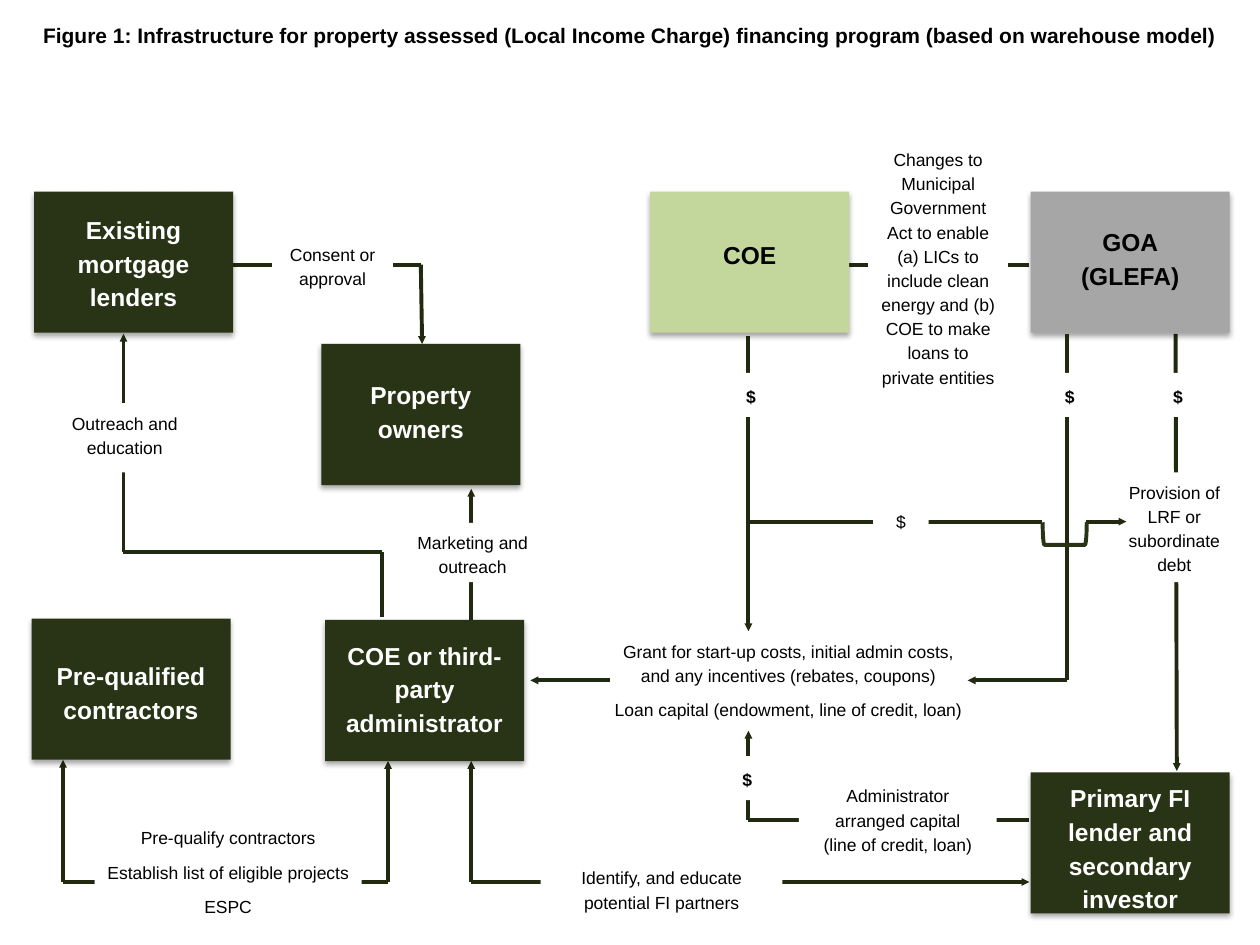
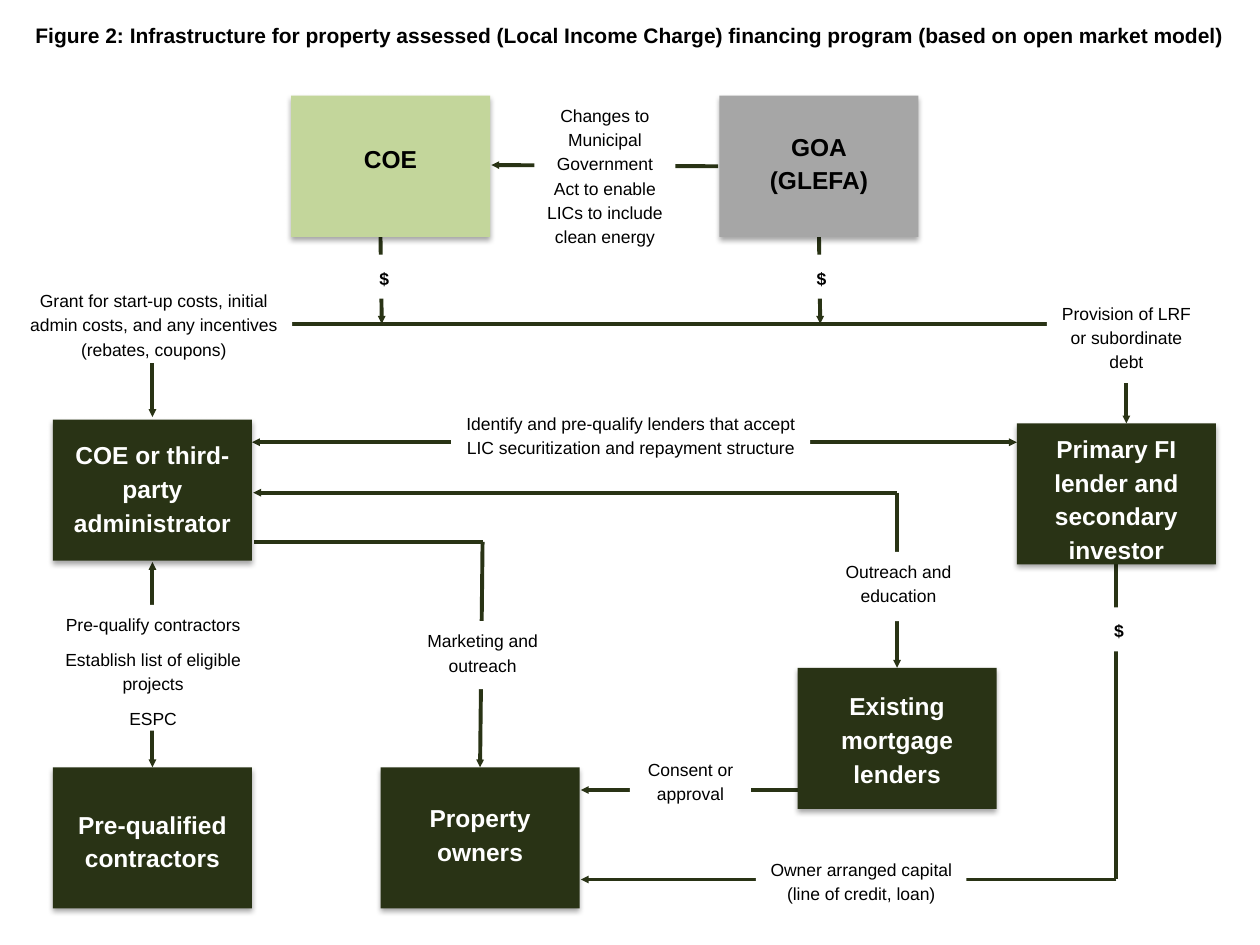
"""Build two flow diagrams of a property assessed financing program."""
import dataclasses
import itertools

import pptx
import pptx.dml.color
import pptx.enum.shapes
import pptx.enum.text
import pptx.oxml
import pptx.oxml.ns
import pptx.util

Inches = pptx.util.Inches
SHAPES = pptx.enum.shapes.MSO_SHAPE
ANCHORS = pptx.enum.text.MSO_ANCHOR
NAMESPACE = pptx.oxml.ns.nsdecls("a")


@dataclasses.dataclass(frozen=True)
class Theme:
    """Colours, type sizes and common dimensions."""
    font: str = "Arial"
    black: str = "000000"
    white: str = "FFFFFF"
    dark: str = "293315"
    warehouse_line: str = "212911"
    green: str = "C3D69B"
    gray: str = "A6A6A6"
    title_size: float = 12
    box_size: float = 14
    label_size: float = 10
    line_width: float = 2.25
    line_spacing: float = 1.15
    box_width: float = 1.58
    box_height: float = 1.12
    inset: float = 0.05


THEME = Theme()

BOX_STYLES = {
    "COE": (THEME.green, THEME.black, 0.3),
    "GOA\n(GLEFA)": (THEME.gray, THEME.black, 0.2),
    "Existing mortgage lenders": (THEME.dark, THEME.white, 0.1),
    "Property owners": (THEME.dark, THEME.white, 0.2),
    "Pre-qualified contractors": (THEME.dark, THEME.white, 0.25),
    "COE or third-party administrator": (THEME.dark, THEME.white, 0.08),
    "Primary FI lender and secondary investor": (THEME.dark, THEME.white, 0),
}
COE, GOA, LENDERS, OWNERS, CONTRACTORS, ADMINISTRATOR, INVESTOR = BOX_STYLES

GRANT = "Grant for start-up costs, initial admin costs, and any incentives (rebates, coupons)"
PROVISION = "Provision of LRF or subordinate debt"
PREQUALIFY = "Pre-qualify contractors\nEstablish list of eligible projects\nESPC"


def color(value):
    """Return an RGB colour from its hexadecimal value."""
    return pptx.dml.color.RGBColor.from_string(value)


def write_text(shape, text, size=THEME.label_size, ink=THEME.black, bold=False,
               anchor=ANCHORS.TOP, top=0, space_after=0, line_spacing=THEME.line_spacing):
    """Write centred paragraphs, one per line of text."""
    frame = shape.text_frame
    frame.word_wrap = True
    frame.auto_size = pptx.enum.text.MSO_AUTO_SIZE.NONE
    frame.vertical_anchor = anchor
    frame.margin_top = Inches(THEME.inset + top)
    frame.text = text
    for paragraph in frame.paragraphs:
        paragraph.alignment = pptx.enum.text.PP_ALIGN.CENTER
        paragraph.line_spacing = line_spacing
        paragraph.space_before = pptx.util.Pt(0)
        paragraph.space_after = pptx.util.Pt(space_after)
        font = paragraph.runs[0].font
        font.name, font.size, font.bold = THEME.font, pptx.util.Pt(size), bold
        font.color.rgb = color(ink)


def add_title(slide, text):
    """Place the figure title across the top of the slide."""
    title = slide.shapes.title
    title.left, title.top, title.width, title.height = map(Inches, (0, 0.13, 10, 0.39))
    write_text(title, text, size=THEME.title_size, bold=True, line_spacing=1)


def add_rectangle(slide, left, top, width, height, fill):
    """Add a plain filled rectangle."""
    shape = slide.shapes.add_shape(SHAPES.RECTANGLE, *map(Inches, (left, top, width, height)))
    shape.fill.solid()
    shape.fill.fore_color.rgb = color(fill)
    shape.line.fill.background()
    shape.shadow.inherit = False
    return shape


def add_soft_shadow(shape):
    """Give a shape a faint shadow below it."""
    effects = shape._element.spPr.find(pptx.oxml.ns.qn("a:effectLst"))
    effects.append(pptx.oxml.parse_xml(
        f'<a:outerShdw {NAMESPACE} blurRad="39370" dist="22860" dir="5400000" rotWithShape="0">'
        f'<a:srgbClr val="{THEME.black}"><a:alpha val="35000"/></a:srgbClr></a:outerShdw>'))


def add_party(slide, name, left, top):
    """Add the box of one party in the program."""
    fill, ink, offset = BOX_STYLES[name]
    box = add_rectangle(slide, left, top, THEME.box_width, THEME.box_height, fill)
    add_soft_shadow(box)
    write_text(box, name, size=THEME.box_size, ink=ink, bold=True, top=offset)


def add_label(slide, text, left, top, width, height, **text_format):
    """Add a white label that interrupts the line behind it."""
    label = add_rectangle(slide, left, top, width, height, THEME.white)
    write_text(label, text, **text_format)


def add_dollar(slide, left, top, bold=True):
    """Mark a flow of money."""
    add_label(slide, "$", left, top, 0.44, 0.35, bold=bold, anchor=ANCHORS.MIDDLE)


def add_flow(slide, ink, points, ends=("tailEnd",)):
    """Join points by straight lines, with arrowheads at the chosen ends."""
    segments = list(itertools.pairwise(points))
    for index, (start, stop) in enumerate(segments):
        connector = slide.shapes.add_connector(
            pptx.enum.shapes.MSO_CONNECTOR.STRAIGHT, *map(Inches, start + stop))
        connector.line.color.rgb = color(ink)
        connector.line.width = pptx.util.Pt(THEME.line_width)
        properties = connector._element.spPr
        properties.append(pptx.oxml.parse_xml(f"<a:effectLst {NAMESPACE}/>"))
        outline = properties.find(pptx.oxml.ns.qn("a:ln"))
        for end, position in (("headEnd", 0), ("tailEnd", len(segments) - 1)):
            if end in ends and index == position:
                outline.append(pptx.oxml.parse_xml(
                    f'<a:{end} {NAMESPACE} type="triangle" w="sm" len="sm"/>'))


def add_line_jump(slide):
    """Add the bracket that carries one line under another."""
    bracket = slide.shapes.add_shape(
        SHAPES.LEFT_BRACKET, *map(Inches, (8.36, 4.06, 0.18, 0.35)))
    bracket.rotation = 270
    bracket.fill.background()
    bracket.line.color.rgb = color(THEME.dark)
    bracket.line.width = pptx.util.Pt(THEME.line_width)
    bracket.shadow.inherit = False


def add_diagram(presentation, title, ink, flows, labels, dollars, parties):
    """Add a slide with its flows, labels and party boxes."""
    slide = presentation.slides.add_slide(presentation.slide_layouts[5])
    add_title(slide, title)
    for flow in flows:
        add_flow(slide, ink, *flow)
    for text, place, space_after in labels:
        add_label(slide, text, *place, space_after=space_after)
    for place in dollars:
        add_dollar(slide, *place)
    for name, place in parties.items():
        add_party(slide, name, *place)
    return slide


def add_warehouse_model(presentation):
    """Add the diagram of the warehouse model."""
    both = ("headEnd", "tailEnd")
    flows = [
        ([(0.5, 6.03), (0.5, 7), (3.08, 7), (3.08, 6.04)], both),
        ([(3.74, 6.04), (3.74, 7), (8.17, 7)], both),
        ([(8.17, 2.1), (6.67, 2.1)],),
        ([(9.33, 2.65), (9.34, 6.12)],),
        ([(8.17, 6.51), (5.94, 6.51), (5.94, 5.8)],),
        ([(3.74, 4.93), (3.74, 3.88)],),
        ([(5.94, 2.67), (5.94, 5.01)],),
        ([(8.27, 4.14), (5.94, 4.14)], ()),
        ([(1.85, 2.1), (3.34, 2.1), (3.35, 2.73)],),
        ([(3.03, 4.9), (3.03, 4.38), (0.98, 4.38), (0.98, 2.65)],),
    ]
    labels = [
        (PROVISION, (8.84, 3.75, 0.96, 0.87), 0),
        ("Changes to Municipal Government Act to enable (a) LICs to include clean energy "
         "and (b) COE to make loans to private entities", (6.89, 1.11, 1.11, 2.01), 0),
        ("Identify, and educate potential FI partners", (4.29, 6.81, 1.92, 0.52), 0),
        (GRANT + "\nLoan capital (endowment, line of credit, loan)", (4.76, 5.01, 2.99, 0.73), 6),
        ("Marketing and outreach", (3.19, 4.15, 1.12, 0.47), 0),
        ("Administrator arranged capital\n(line of credit, loan)", (6.34, 6.16, 1.57, 0.66), 0),
        ("Consent or approval", (2.16, 1.86, 0.96, 0.47), 0),
        ("Outreach and education", (0.43, 3.2, 1.12, 0.55), 0),
        (PREQUALIFY, (0.75, 6.49, 2.12, 0.88), 6),
    ]
    front_flows = [
        [(8.47, 2.65), (8.47, 5.4), (7.68, 5.4)],
        [(4.84, 5.4), (4.21, 5.4)],
        [(8.62, 4.14), (8.94, 4.14)],
    ]
    dollars = [(5.74, 2.96), (9.13, 2.96), (5.71, 6), (6.93, 3.95, False)]
    parties = {
        LENDERS: (0.27, 1.52), COE: (5.16, 1.52), GOA: (8.18, 1.52), OWNERS: (2.55, 2.73),
        CONTRACTORS: (0.25, 4.91), ADMINISTRATOR: (2.58, 4.92), INVESTOR: (8.18, 6.13),
    }
    slide = add_diagram(
        presentation,
        "Figure 1: Infrastructure for property assessed (Local Income Charge) "
        "financing program (based on warehouse model)",
        THEME.warehouse_line, flows, labels, dollars, parties)
    for points in front_flows:
        add_flow(slide, THEME.warehouse_line, points)
    add_dollar(slide, 8.27, 2.96)
    add_line_jump(slide)


def add_open_market_model(presentation):
    """Add the diagram of the open market model."""
    both = ("headEnd", "tailEnd")
    flows = [
        ([(1.21, 4.46), (1.21, 6.09)], both),
        ([(1.21, 3.31), (1.21, 2.57), (8.94, 2.57), (8.94, 3.36)], both),
        ([(2.02, 4.3), (3.83, 4.3), (3.81, 6.09)],),
        ([(5.7, 1.32), (3.9, 1.31)],),
        ([(6.33, 6.27), (4.61, 6.27)],),
        ([(2, 3.51), (8.07, 3.51)], both),
        ([(2.01, 3.91), (7.12, 3.91), (7.12, 5.3)], both),
        ([(3.02, 1.88), (3.03, 2.57)],),
        ([(6.5, 1.88), (6.51, 2.57)],),
        ([(8.86, 4.46), (8.86, 6.98), (4.61, 6.98)],),
    ]
    labels = [
        ("Marketing and outreach", (3.21, 4.93, 1.24, 0.54), 0),
        (PREQUALIFY, (0.35, 4.8, 1.73, 1), 6),
        ("Changes to Municipal Government Act to enable LICs to include clean energy",
         (4.24, 0.76, 1.12, 1.23), 0),
        ("Consent or approval", (5, 5.95, 0.96, 0.47), 0),
        ("Outreach and education", (6.57, 4.38, 1.12, 0.55), 0),
        ("Identify and pre-qualify lenders that accept LIC securitization and repayment structure",
         (3.58, 3.2, 2.85, 0.58), 0),
        (PROVISION, (8.31, 2.33, 1.26, 0.71), 0),
        (GRANT, (0.12, 2.23, 2.2, 0.65), 0),
        ("Owner arranged capital\n(line of credit, loan)", (6, 6.74, 1.67, 0.47), 0),
    ]
    dollars = [(2.83, 2.02), (6.3, 2.02), (8.66, 4.82)]
    parties = {
        COE: (2.31, 0.76), GOA: (5.71, 0.76), ADMINISTRATOR: (0.42, 3.33),
        INVESTOR: (8.07, 3.36), LENDERS: (6.33, 5.3), CONTRACTORS: (0.42, 6.09),
        OWNERS: (3.02, 6.09),
    }
    add_diagram(
        presentation,
        "Figure 2: Infrastructure for property assessed (Local Income Charge) "
        "financing program (based on open market model)",
        THEME.dark, flows, labels, dollars, parties)


def main():
    """Build and save the presentation."""
    presentation = pptx.Presentation()
    presentation.slide_width, presentation.slide_height = Inches(10), Inches(7.5)
    add_warehouse_model(presentation)
    add_open_market_model(presentation)
    presentation.save("out.pptx")


if __name__ == "__main__":
    main()
